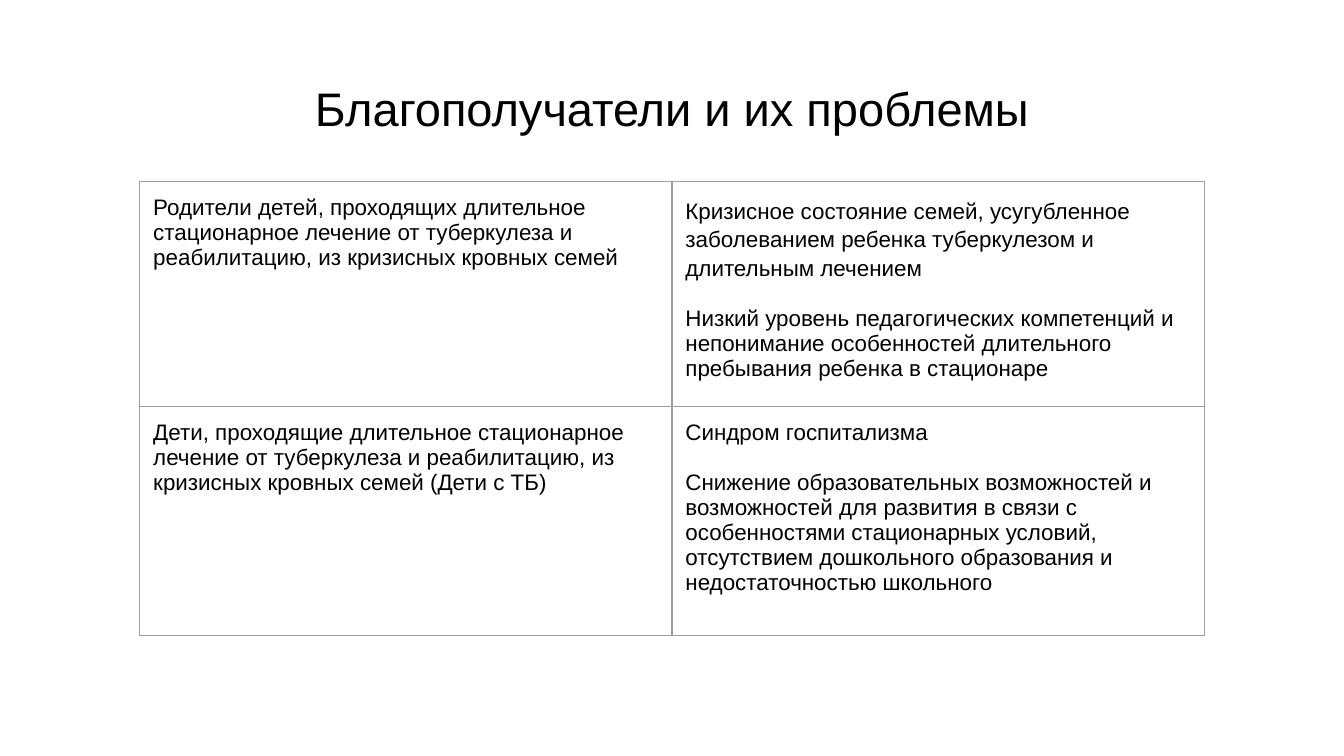
from dataclasses import dataclass

from lxml.etree import SubElement
from pptx import Presentation
from pptx.dml.color import RGBColor
from pptx.enum.text import MSO_ANCHOR, PP_ALIGN
from pptx.oxml.ns import qn
from pptx.slide import Slide
from pptx.table import _Cell
from pptx.text.text import TextFrame, _Paragraph
from pptx.util import Inches, Pt

BLACK = RGBColor(0x00, 0x00, 0x00)
WHITE = RGBColor(0xFF, 0xFF, 0xFF)
BORDER_GRAY = RGBColor(0x9E, 0x9E, 0x9E)
FONT = "Arial"
TITLE_SIZE = 25.2
BODY_SIZE = 12
BORDER_WIDTH = Pt(0.75)
INSET = Inches(0.1)
PARAGRAPH_GAP = Pt(13.4)
COLUMN_WIDTH = Inches(3.96)
PAGE_WIDTH = Inches(10)
PAGE_HEIGHT = Inches(10 * 9 / 16)


@dataclass(frozen=True)
class Beneficiary:
    name: str
    problems: tuple[str, ...]
    row_height: float
    first_line_spacing: float = 1.0


BENEFICIARIES = (
    Beneficiary(
        "Родители детей, проходящих длительное стационарное лечение от туберкулеза "
        "и реабилитацию, из кризисных кровных семей",
        (
            "Кризисное состояние семей, усугубленное заболеванием ребенка "
            "туберкулезом и длительным лечением",
            "Низкий уровень педагогических компетенций и непонимание особенностей "
            "длительного пребывания ребенка в стационаре",
        ),
        row_height=1.54,
        first_line_spacing=1.15,
    ),
    Beneficiary(
        "Дети, проходящие длительное стационарное лечение от туберкулеза "
        "и реабилитацию, из кризисных кровных семей (Дети с ТБ)",
        (
            "Синдром госпитализма",
            "Снижение образовательных возможностей и возможностей для развития "
            "в связи с особенностями стационарных условий, отсутствием дошкольного "
            "образования и недостаточностью школьного",
        ),
        row_height=1.7,
    ),
)


def add_span(para: _Paragraph, text: str, size: float) -> None:
    span = para.add_run()
    span.text = text
    span.font.name = FONT
    span.font.size = Pt(size)
    span.font.color.rgb = BLACK


def set_insets(target: TextFrame | _Cell) -> None:
    target.margin_left = target.margin_right = INSET
    target.margin_top = target.margin_bottom = INSET


def set_borders(cell: _Cell) -> None:
    properties = cell._tc.get_or_add_tcPr()
    for index, side in enumerate(("a:lnL", "a:lnR", "a:lnT", "a:lnB")):
        line = properties.makeelement(qn(side), {"w": str(BORDER_WIDTH)})
        fill = SubElement(line, qn("a:solidFill"))
        SubElement(fill, qn("a:srgbClr"), {"val": str(BORDER_GRAY)})
        properties.insert(index, line)


def fill_cell(cell: _Cell, texts: tuple[str, ...], first_line_spacing: float = 1.0) -> None:
    set_insets(cell)
    cell.vertical_anchor = MSO_ANCHOR.TOP
    cell.fill.solid()
    cell.fill.fore_color.rgb = WHITE
    set_borders(cell)
    frame = cell.text_frame
    for index, text in enumerate(texts):
        para = frame.add_paragraph() if index else frame.paragraphs[0]
        para.line_spacing = 1.0 if index else first_line_spacing
        if index < len(texts) - 1:
            para.space_after = PARAGRAPH_GAP
        add_span(para, text, BODY_SIZE)


def add_title(page: Slide, text: str) -> None:
    box = page.shapes.add_textbox(Inches(0.34), Inches(0.49), Inches(9.32), Inches(0.63))
    frame = box.text_frame
    frame.word_wrap = True
    frame.vertical_anchor = MSO_ANCHOR.MIDDLE
    set_insets(frame)
    para = frame.paragraphs[0]
    para.alignment = PP_ALIGN.CENTER
    add_span(para, text, TITLE_SIZE)


def add_beneficiary_table(page: Slide) -> None:
    height = Inches(sum(item.row_height for item in BENEFICIARIES))
    table = page.shapes.add_table(
        len(BENEFICIARIES), 2, Inches(1.04), Inches(1.35), 2 * COLUMN_WIDTH, height
    ).table
    table.first_row = False
    table.horz_banding = False
    for column in table.columns:
        column.width = COLUMN_WIDTH
    for index, item in enumerate(BENEFICIARIES):
        table.rows[index].height = Inches(item.row_height)
        fill_cell(table.cell(index, 0), (item.name,))
        fill_cell(table.cell(index, 1), item.problems, item.first_line_spacing)


def main() -> None:
    deck = Presentation()
    deck.slide_width = PAGE_WIDTH
    deck.slide_height = PAGE_HEIGHT
    page = deck.slides.add_slide(deck.slide_layouts[6])
    add_title(page, "Благополучатели и их проблемы")
    add_beneficiary_table(page)
    deck.save("out.pptx")


if __name__ == "__main__":
    main()
